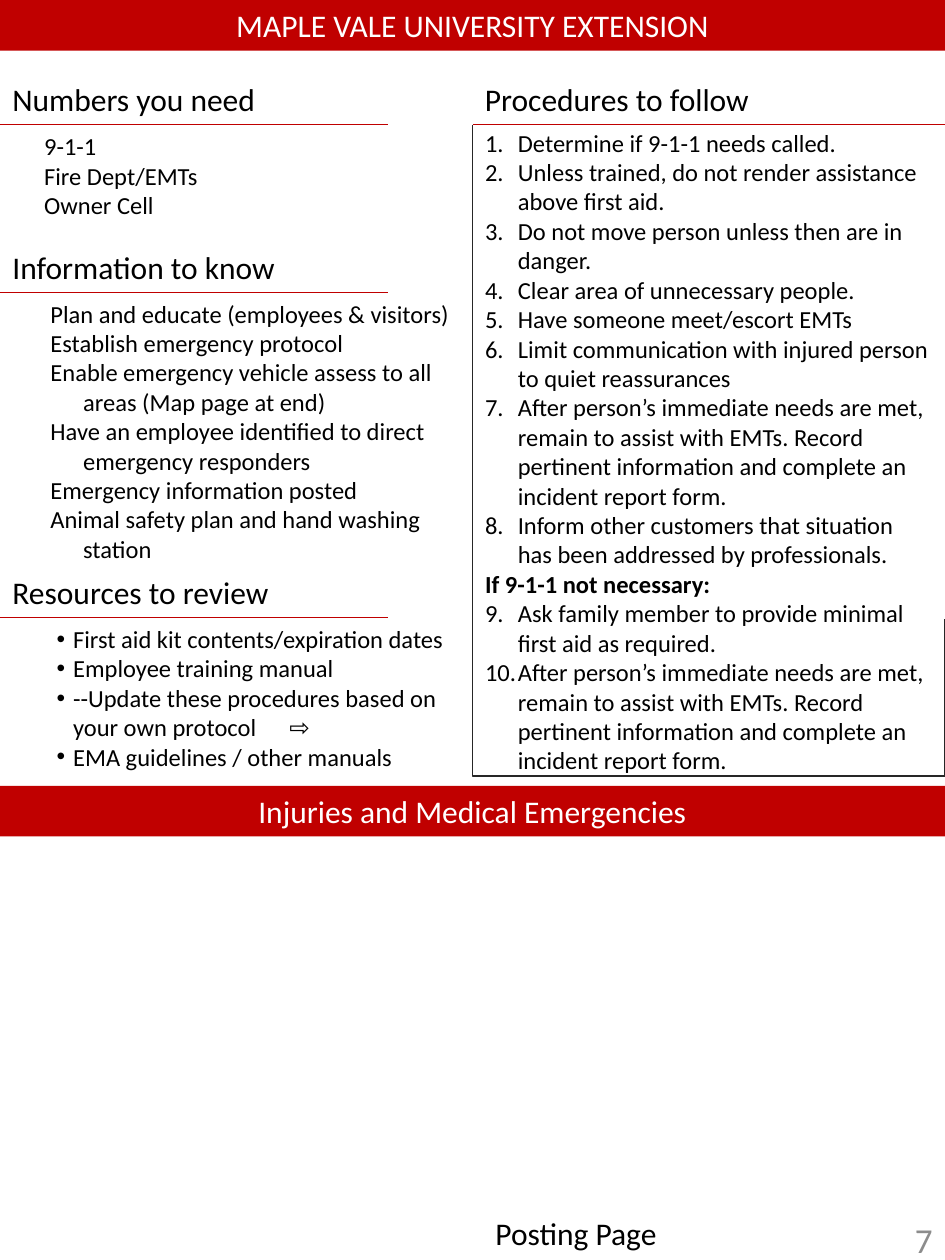
from lxml.etree import SubElement
from pptx import Presentation
from pptx.dml.color import RGBColor
from pptx.enum.shapes import MSO_CONNECTOR, MSO_SHAPE
from pptx.enum.text import MSO_ANCHOR, MSO_AUTO_SIZE, PP_ALIGN
from pptx.oxml.ns import qn
from pptx.util import Pt

RED, BLACK, WHITE, GRAY, DARK = "C00000", "000000", "FFFFFF", "8C8C8C", "262626"

NUMBERS = ["9-1-1", "Fire Dept/EMTs", "Owner Cell"]
FACTS = [
    "Plan and educate (employees & visitors)",
    "Establish emergency protocol",
    "Enable emergency vehicle assess to all areas (Map page at end)",
    "Have an employee identified to direct emergency responders",
    "Emergency information posted",
    "Animal safety plan and hand washing station",
]
SOURCES = [
    "First aid kit contents/expiration dates",
    "Employee training manual",
    "--Update these procedures based on your own protocol\t⇨",
    "EMA guidelines / other manuals",
]
ASSIST = (
    "After person’s immediate needs are met, remain to assist with EMTs. "
    "Record pertinent information and complete an incident report form."
)
CALLED = [
    "Determine if 9-1-1 needs called.",
    "Unless trained, do not render assistance above first aid.",
    "Do not move person unless then are in danger.",
    "Clear area of unnecessary people.",
    "Have someone meet/escort EMTs",
    "Limit communication with injured person to quiet reassurances",
    ASSIST,
    "Inform other customers that situation has been addressed by professionals.",
]
MINOR = "If 9-1-1 not necessary:"
UNCALLED = ["Ask family member to provide minimal first aid as required.", ASSIST]


def color(code):
    """Turn a hex string into a colour."""
    return RGBColor.from_string(code)


def place(shape, box):
    """Move a shape to a box given in points."""
    shape.left, shape.top, shape.width, shape.height = map(Pt, box)


def style(shape, size, code=BLACK, align=PP_ALIGN.LEFT, anchor=MSO_ANCHOR.TOP):
    """Format all the text of a shape."""
    frame = shape.text_frame
    frame.word_wrap = True
    frame.auto_size = MSO_AUTO_SIZE.NONE
    frame.vertical_anchor = anchor
    for para in frame.paragraphs:
        para.alignment = align
        para.space_before = Pt(0)
        for run in para.runs:
            font = run.font
            font.name, font.size, font.bold = "Calibri", Pt(size), False
            font.color.rgb = color(code)


def label(slide, box, text, size=18, **look):
    """Add a text box with one line of text."""
    shape = slide.shapes.add_textbox(*map(Pt, box))
    shape.text_frame.text = text
    style(shape, size, **look)


def banner(shape, box, text):
    """Make a shape a red band with a centred white title."""
    place(shape, box)
    shape.fill.solid()
    shape.fill.fore_color.rgb = color(RED)
    shape.line.fill.background()
    shape.text_frame.text = text
    style(shape, 18, WHITE, PP_ALIGN.CENTER, MSO_ANCHOR.MIDDLE)


def link(slide, kind, ends, code):
    """Draw a thin connector without a shadow."""
    line = slide.shapes.add_connector(kind, *map(Pt, ends))
    line.line.color.rgb = color(code)
    line.line.width = Pt(0.75)
    SubElement(line._element.spPr, qn("a:effectLst"))
    return line


def heading(slide, box, text, rule):
    """Add a section heading with a red rule under it."""
    left, top, width, height = box
    label(slide, box, text)
    base = top + height
    link(slide, MSO_CONNECTOR.STRAIGHT, (left, base, left + rule, base), RED)


def bullet(para, hang, kind="buNone", **marks):
    """Set the hanging indent and the bullet of a paragraph."""
    props = para._p.get_or_add_pPr()
    props.set("marL", str(Pt(hang)))
    props.set("indent", str(Pt(-hang)))
    SubElement(props, qn("a:" + kind), marks)


def listing(shape, box, items, hang=0, kind="buNone", **marks):
    """Fill a placeholder with a plain or bulleted list."""
    place(shape, box)
    shape.text_frame.text = "\n".join(items)
    style(shape, 14)
    for para in shape.text_frame.paragraphs:
        bullet(para, hang, kind, **marks)
        if "\t" in para.text:
            stops = SubElement(para._p.get_or_add_pPr(), qn("a:tabLst"))
            SubElement(stops, qn("a:tab"), pos=str(Pt(133)), algn="l")


def steps(shape, box):
    """Fill a placeholder with the numbered steps and their subheading."""
    place(shape, box)
    shape.text_frame.text = "\n".join(CALLED + [MINOR] + UNCALLED)
    style(shape, 14)
    split = len(CALLED)
    for spot, para in enumerate(shape.text_frame.paragraphs):
        if spot == split:
            bullet(para, 0)
            para.runs[0].font.bold = True
        else:
            start = 1 if spot < split else split + 1
            bullet(para, 18.72, "buAutoNum", type="arabicPeriod", startAt=str(start))


def bracket(slide, box):
    """Draw an elbow line down the left, along the base and up the right."""
    left, top, width, height = box
    x = left + (width - height) / 2
    y = top + (height - width) / 2
    line = link(slide, MSO_CONNECTOR.ELBOW, (x, y, x + height, y + width), DARK)
    props = line._element.spPr
    frame = props.find(qn("a:xfrm"))
    frame.set("rot", "16200000")
    frame.set("flipH", "1")
    guides = props.find(qn("a:prstGeom")).find(qn("a:avLst"))
    SubElement(guides, qn("a:gd"), name="adj1", fmla="val 131700")


def main():
    """Build the emergency page."""
    deck = Presentation()
    deck.slide_width, deck.slide_height = Pt(540), Pt(720)
    slide = deck.slides.add_slide(deck.slide_layouts[4])
    holds = slide.placeholders

    banner(slide.shapes.title, (0, 0, 540, 29), "MAPLE VALE UNIVERSITY EXTENSION")
    band = slide.shapes.add_shape(MSO_SHAPE.RECTANGLE, 0, 0, 0, 0)
    band.shadow.inherit = False
    banner(band, (0, 449, 540, 29), "Injuries and Medical Emergencies")

    heads = [(42, "Numbers you need"), (138, "Information to know"), (324, "Resources to review")]
    for top, text in heads:
        heading(slide, (0, top, 179, 29), text, 222)
    heading(slide, (270, 42, 240, 29), "Procedures to follow", 270)

    listing(holds[1], (18, 71.5, 252, 75), NUMBERS)
    listing(holds[3], (21.6, 167, 248.4, 160), FACTS, 18.72)
    listing(holds[2], (25.2, 353, 237, 109), SOURCES, 9.36, "buChar", char="•")
    steps(holds[4], (270, 69.3, 270, 397))
    bracket(slide, (270, 71.5, 270, 282.5))

    label(slide, (276, 690, 264, 29), "Posting Page")
    label(slide, (414, 696, 126, 24), "7", 20, code=GRAY,
          align=PP_ALIGN.RIGHT, anchor=MSO_ANCHOR.MIDDLE)
    deck.save("out.pptx")


if __name__ == "__main__":
    main()
